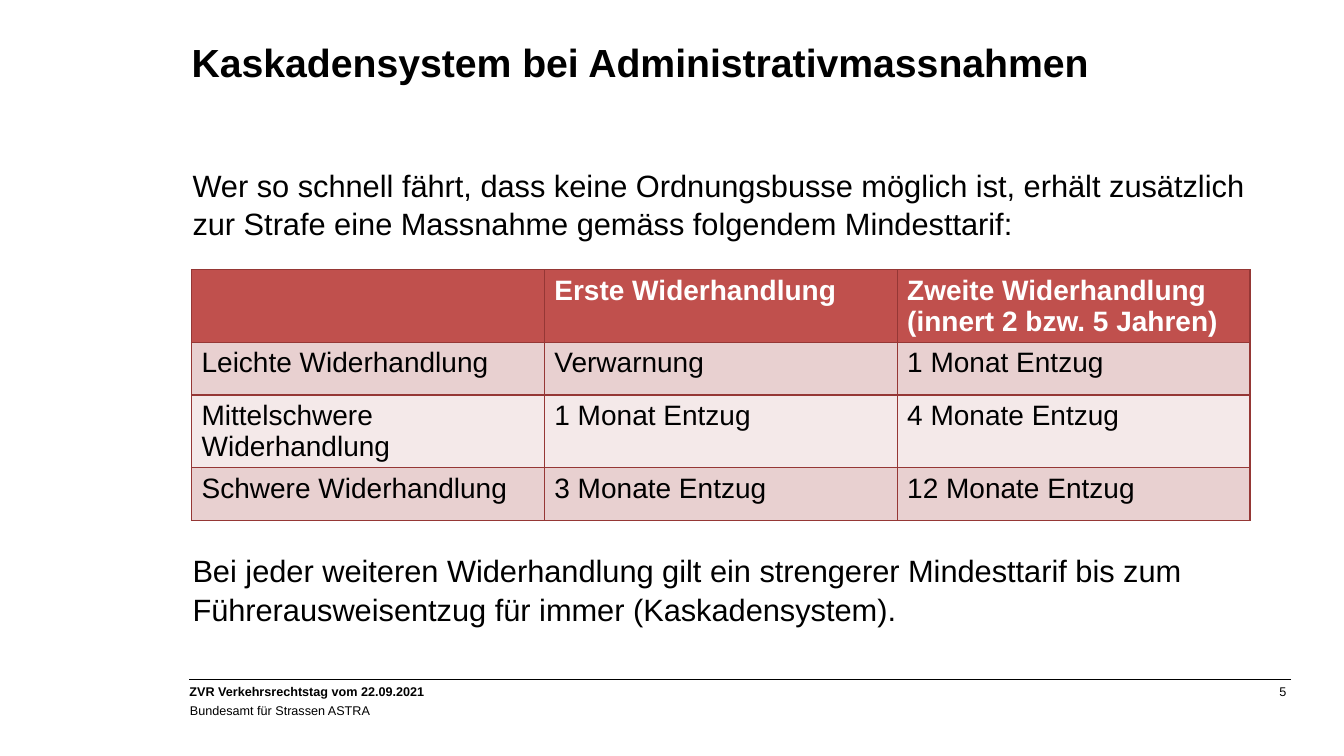
from dataclasses import dataclass

import lxml.etree
import pptx
import pptx.dml.color
import pptx.enum.shapes
import pptx.enum.text
import pptx.oxml
import pptx.oxml.ns
import pptx.util

Pt = pptx.util.Pt
Align = pptx.enum.text.PP_ALIGN
qn = pptx.oxml.ns.qn

BLACK = "000000"
WHITE = "FFFFFF"
BORDER = "953735"
HEADER_FILL = "C0504D"
BAND_FILLS = ("E8D0D0", "F4E9E9")

ROWS = (
    ("", "Erste Widerhandlung", "Zweite Widerhandlung\n(innert 2 bzw. 5 Jahren)"),
    ("Leichte Widerhandlung", "Verwarnung", "1 Monat Entzug"),
    ("Mittelschwere Widerhandlung", "1 Monat Entzug", "4 Monate Entzug"),
    ("Schwere Widerhandlung", "3 Monate Entzug", "12 Monate Entzug"),
)
ROW_HEIGHTS = (52, 37.44, 52, 37.44)
COLUMN_WIDTH = 252

BODY = (
    "Wer so schnell fährt, dass keine Ordnungsbusse möglich ist, erhält zusätzlich "
    "zur Strafe eine Massnahme gemäss folgendem Mindesttarif:\n"
    "Bei jeder weiteren Widerhandlung gilt ein strengerer Mindesttarif bis zum "
    "Führerausweisentzug für immer (Kaskadensystem)."
)


@dataclass
class TextBlock:
    text: str
    place: tuple[float, float, float, float]
    size: float
    bold: bool = False
    align: Align = Align.LEFT
    insets: tuple[float, float, float, float] = (0, 0, 0, 0)
    line_spacing: float = 1.0
    gap: float = 0


TITLE = TextBlock("Kaskadensystem bei Administrativmassnahmen",
                  (136.8, 27.5, 782.64, 77.76), 28, bold=True)
CONTENT = TextBlock(BODY, (137.5, 117.5, 784.8, 355), 22, line_spacing=1.05, gap=220)
FOOTERS = (
    TextBlock("Bundesamt für Strassen ASTRA", (135.7, 502, 371.5, 16.5), 9),
    TextBlock("ZVR Verkehrsrechtstag vom 22.09.2021", (135.36, 485.28, 571.68, 28.8), 9,
              bold=True, insets=(0, 3.6, 7.2, 3.6)),
    TextBlock("5", (702, 485.28, 223.92, 37.44), 9, align=Align.RIGHT,
              insets=(7.2, 3.6, 7.2, 3.6)),
)


def colour(value: str) -> pptx.dml.color.RGBColor:
    return pptx.dml.color.RGBColor.from_string(value)


def apply(target: object, values: dict) -> None:
    for name, value in values.items():
        setattr(target, name, value)


def format_spans(frame, size: float, bold: bool, text_colour: str) -> None:
    for para in frame.paragraphs:
        for span in para.runs:
            apply(span.font, {"name": "Arial", "size": Pt(size), "bold": bold})
            span.font.color.rgb = colour(text_colour)


def write_block(box, block: TextBlock) -> None:
    sides = ("left", "top", "width", "height")
    apply(box, {side: Pt(value) for side, value in zip(sides, block.place)})
    frame = box.text_frame
    margins = ("margin_left", "margin_top", "margin_right", "margin_bottom")
    apply(frame, {margin: Pt(value) for margin, value in zip(margins, block.insets)})
    apply(frame, {
        "word_wrap": True,
        "auto_size": pptx.enum.text.MSO_AUTO_SIZE.NONE,
        "vertical_anchor": pptx.enum.text.MSO_ANCHOR.TOP,
        "text": block.text,
    })
    for index, para in enumerate(frame.paragraphs):
        properties = para._p.get_or_add_pPr()
        properties.set("marL", "0")
        properties.set("indent", "0")
        lxml.etree.SubElement(properties, qn("a:buNone"))
        apply(para, {
            "alignment": block.align,
            "line_spacing": block.line_spacing,
            "space_before": Pt(block.gap if index else 0),
        })
    format_spans(frame, block.size, block.bold, BLACK)


def border_cell(cell) -> None:
    properties = cell._tc.get_or_add_tcPr()
    for position, side in enumerate(("lnL", "lnR", "lnT", "lnB")):
        line = lxml.etree.Element(qn(f"a:{side}"), w=str(Pt(1)))
        fill = lxml.etree.SubElement(line, qn("a:solidFill"))
        lxml.etree.SubElement(fill, qn("a:srgbClr"), val=BORDER)
        properties.insert(position, line)


def add_tariff_table(page) -> None:
    columns = len(ROWS[0])
    table = page.shapes.add_table(len(ROWS), columns, Pt(136.8), Pt(192.7),
                                  Pt(COLUMN_WIDTH * columns), Pt(sum(ROW_HEIGHTS))).table
    for column in table.columns:
        column.width = Pt(COLUMN_WIDTH)
    for index, (texts, height) in enumerate(zip(ROWS, ROW_HEIGHTS)):
        header = index == 0
        table.rows[index].height = Pt(height)
        for cell, text in zip(table.rows[index].cells, texts):
            cell.text = text
            cell.fill.solid()
            cell.fill.fore_color.rgb = colour(HEADER_FILL if header else BAND_FILLS[(index - 1) % 2])
            border_cell(cell)
            format_spans(cell.text_frame, 20, header, WHITE if header else BLACK)


def add_footer_rule(page) -> None:
    rule = page.shapes.add_connector(pptx.enum.shapes.MSO_CONNECTOR.STRAIGHT,
                                     Pt(922.3), Pt(485.28), Pt(135.36), Pt(485.28))
    rule.line.color.rgb = colour(BLACK)
    rule.line.width = Pt(0.75)
    lxml.etree.SubElement(rule._element.spPr, qn("a:effectLst"))


def main() -> None:
    deck = pptx.Presentation()
    apply(deck, {"slide_width": Pt(960), "slide_height": Pt(540)})
    page = deck.slides.add_slide(deck.slide_layouts[1])
    add_footer_rule(page)
    write_block(page.shapes.title, TITLE)
    write_block(page.placeholders[1], CONTENT)
    for block in FOOTERS:
        write_block(page.shapes.add_textbox(0, 0, 0, 0), block)
    add_tariff_table(page)
    deck.save("out.pptx")


if __name__ == "__main__":
    main()
